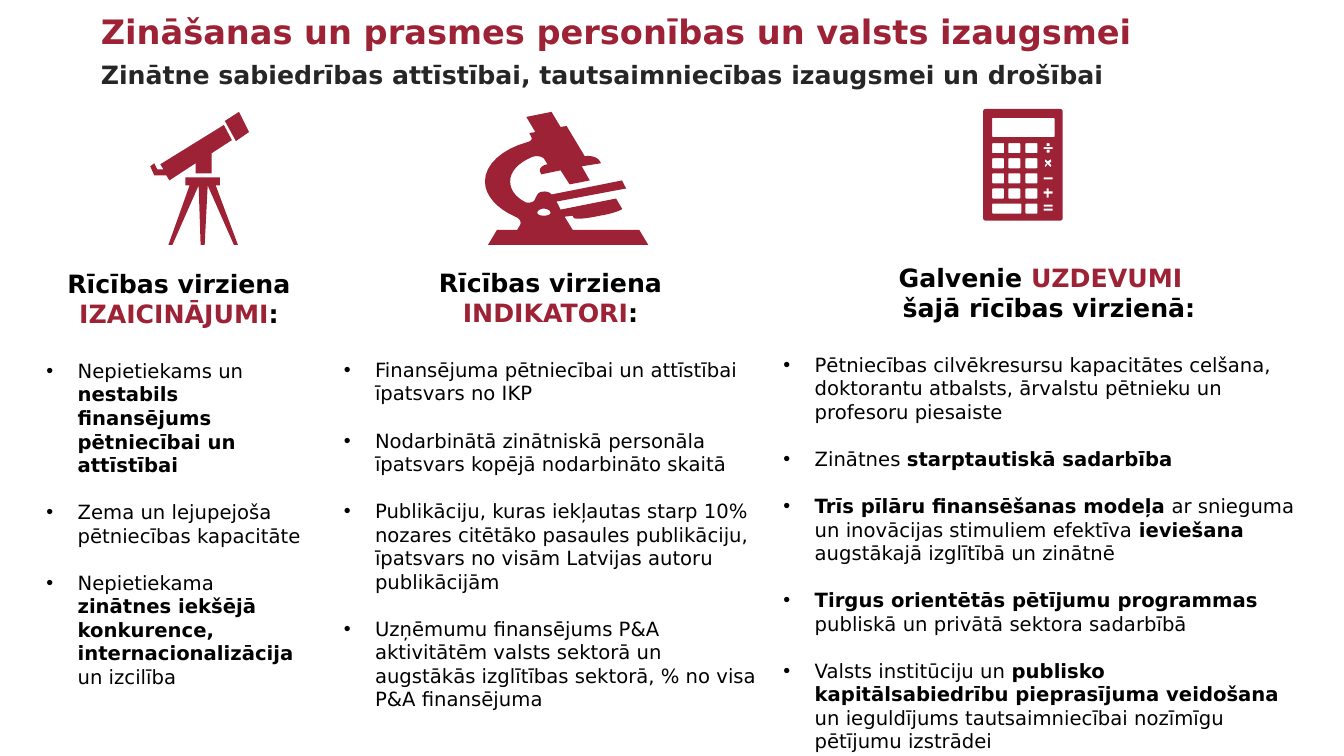
import pptx
import pptx.util
import pptx.dml.color
import pptx.enum.text
import lxml.etree

Inches = pptx.util.Inches
Pt = pptx.util.Pt
Align = pptx.enum.text.PP_ALIGN

CRIMSON = pptx.dml.color.RGBColor(0x9D, 0x22, 0x35)
CHARCOAL = pptx.dml.color.RGBColor(0x26, 0x26, 0x26)
BLACK = pptx.dml.color.RGBColor(0, 0, 0)
FONT = "DejaVu Sans"

TITLE = "Zināšanas un prasmes personības un valsts izaugsmei"
SUBTITLE = "Zinātne sabiedrības attīstībai, tautsaimniecības izaugsmei un drošībai"

# Text between asterisks is emphasised; each heading line carries its first-line shift.
COLUMNS = [
    {"box": (0.41, 2.61, 2.73, 4.89),
     "heading": [("Rīcības virziena", -0.25), ("*IZAICINĀJUMI*:", 0)],
     "points": [
         "Nepietiekams un *nestabils finansējums pētniecībai un attīstībai*",
         "Zema un lejupejoša pētniecības kapacitāte",
         "Nepietiekama *zinātnes iekšējā konkurence, internacionalizācija* un izcilība"]},
    {"box": (3.36, 2.6, 4.2, 4.9),
     "heading": [("Rīcības virziena", -0.35), ("*INDIKATORI*:", 0)],
     "points": [
         "Finansējuma pētniecībai un attīstībai īpatsvars no IKP",
         "Nodarbinātā zinātniskā personāla īpatsvars kopējā nodarbināto skaitā",
         "Publikāciju, kuras iekļautas starp 10% nozares citētāko pasaules publikāciju, "
         "īpatsvars no visām Latvijas autoru publikācijām",
         "Uzņēmumu finansējums P&A aktivitātēm valsts sektorā un augstākās izglītības "
         "sektorā, % no visa P&A finansējuma"]},
    {"box": (7.72, 2.55, 5.2, 4.95),
     "heading": [("Galvenie *UZDEVUMI*", 0), ("šajā rīcības virzienā:", 0.17)],
     "points": [
         "Pētniecības cilvēkresursu kapacitātes celšana, doktorantu atbalsts, "
         "ārvalstu pētnieku un profesoru piesaiste",
         "Zinātnes *starptautiskā sadarbība*",
         "*Trīs pīlāru finansēšanas modeļa* ar snieguma un inovācijas stimuliem efektīva "
         "*ieviešana* augstākajā izglītībā un zinātnē",
         "*Tirgus orientētās pētījumu programmas* publiskā un privātā sektora sadarbībā",
         "Valsts institūciju un *publisko kapitālsabiedrību pieprasījuma veidošana* "
         "un ieguldījums tautsaimniecībai nozīmīgu pētījumu izstrādei"]},
]

TELESCOPE = [
    [(2.37, 1.11), (2.23, 1.2), (2.34, 1.4), (2.47, 1.31)],
    [(2.22, 1.24), (1.59, 1.63), (1.62, 1.68), (1.56, 1.68), (1.53, 1.62), (1.49, 1.65),
     (1.53, 1.74), (1.65, 1.74), (1.68, 1.79), (1.94, 1.62), (1.94, 1.72), (2.1, 1.72),
     (2.1, 1.52), (2.3, 1.39)],
    [(1.84, 1.76), (1.84, 1.84), (1.88, 1.84), (1.67, 2.43), (1.71, 2.43), (1.97, 1.84),
     (1.99, 2.43), (2.03, 2.43), (2.06, 1.84), (2.32, 2.43), (2.36, 2.43), (2.14, 1.84),
     (2.18, 1.84), (2.18, 1.76)],
]

MICROSCOPE = [
    [(5.47, 1.11), (5.22, 1.16), (5.31, 1.31), (5.25, 1.32), (5.27, 1.36),
     (5.28, 1.38, 5.27, 1.4, 5.23, 1.41), (4.98, 1.48, 4.81, 1.63, 4.81, 1.8),
     (4.81, 1.94, 4.93, 2.07, 5.11, 2.15), (5.16, 2.17, 5.17, 2.2, 5.16, 2.23),
     (5.13, 2.28), (4.93, 2.28), (4.84, 2.43), (6.43, 2.43), (6.34, 2.28), (5.68, 2.28),
     (5.6, 2.15), (5.68, 2.14), (5.69, 2.16), (5.7, 2.18, 5.81, 2.17, 5.95, 2.14),
     (6.08, 2.12, 6.18, 2.08, 6.17, 2.07), (6.11, 1.97), (5.56, 2.08), (5.52, 2),
     (6.21, 1.87), (6.17, 1.79), (5.47, 1.93), (5.45, 1.89, 5.35, 1.89, 5.33, 1.93),
     (5.3, 1.99), (5.28, 2.01, 5.23, 2.02, 5.2, 2), (5.11, 1.95, 5.06, 1.88, 5.06, 1.8),
     (5.06, 1.7, 5.14, 1.62, 5.27, 1.56), (5.32, 1.54, 5.38, 1.55, 5.4, 1.58),
     (5.43, 1.63), (5.37, 1.64, 5.34, 1.68, 5.36, 1.71), (5.37, 1.73), (5.56, 1.69),
     (5.65, 1.83), (5.85, 1.79), (5.77, 1.65), (5.96, 1.62), (5.95, 1.6),
     (5.93, 1.56, 5.86, 1.54, 5.8, 1.55), (5.62, 1.25), (5.56, 1.26)],
    [(5.39, 2.07), (5.43, 2.07, 5.46, 2.09, 5.46, 2.11), (5.46, 2.13, 5.43, 2.14, 5.39, 2.14),
     (5.36, 2.14, 5.33, 2.13, 5.33, 2.11), (5.33, 2.09, 5.36, 2.07, 5.39, 2.07)],
]

MULTIPLY = [(10.37, 1.58), (10.39, 1.6), (10.42, 1.58), (10.43, 1.6), (10.41, 1.62),
            (10.43, 1.64), (10.42, 1.66), (10.39, 1.63), (10.37, 1.66), (10.36, 1.64),
            (10.38, 1.62), (10.36, 1.6)]
PLUS = [(10.38, 1.87), (10.4, 1.87), (10.4, 1.9), (10.44, 1.9), (10.44, 1.92), (10.4, 1.92),
        (10.4, 1.96), (10.38, 1.96), (10.38, 1.92), (10.35, 1.92), (10.35, 1.9), (10.38, 1.9)]
BAR_TOPS = [1.46, 1.76, 2.03, 2.07]
DIVIDE_DOT_TOPS = [1.42, 1.485]
KEY_LEFTS = [9.84, 10.0, 10.17]
KEY_TOP, KEY_PITCH, KEY_WIDTH, KEY_HEIGHT = 1.42, 0.15, 0.12, 0.1


def rounded(left, top, width, height, radius):
    right, bottom = left + width, top + height
    return [(left + radius, top), (right - radius, top),
            (right, top, right, top, right, top + radius), (right, bottom - radius),
            (right, bottom, right, bottom, right - radius, bottom), (left + radius, bottom),
            (left, bottom, left, bottom, left, bottom - radius), (left, top + radius),
            (left, top, left, top, left + radius, top)]


def calculator():
    contours = [rounded(9.75, 1.08, 0.79, 1.11, 0.06), rounded(9.84, 1.17, 0.62, 0.19, 0.02)]
    for row in range(4):
        for left in KEY_LEFTS:
            contours.append(rounded(left, KEY_TOP + row * KEY_PITCH, KEY_WIDTH, KEY_HEIGHT, 0.02))
    for left, width in ((KEY_LEFTS[0], 0.29), (KEY_LEFTS[2], KEY_WIDTH)):
        contours.append(rounded(left, KEY_TOP + 4 * KEY_PITCH, width, KEY_HEIGHT, 0.02))
    contours += [rounded(10.38, top, 0.03, 0.03, 0.01) for top in DIVIDE_DOT_TOPS]
    contours += [[(10.35, top), (10.44, top), (10.44, top + 0.02), (10.35, top + 0.02)]
                 for top in BAR_TOPS]
    return contours + [MULTIPLY, PLUS]


def flatten(contour, steps=8):
    points = []
    for node in contour:
        if len(node) == 2:
            points.append(node)
            continue
        start, first, second, end = points[-1], node[:2], node[2:4], node[4:]
        for step in range(1, steps + 1):
            t = step / steps
            points.append(tuple(
                (1 - t) ** 3 * a + 3 * (1 - t) ** 2 * t * b + 3 * (1 - t) * t ** 2 * c + t ** 3 * d
                for a, b, c, d in zip(start, first, second, end)))
    return [(Inches(x), Inches(y)) for x, y in points]


def draw_icon(slide, contours):
    outlines = [flatten(contour) for contour in contours]
    builder = slide.shapes.build_freeform(*outlines[0][0], scale=1.0)
    for index, outline in enumerate(outlines):
        if index:
            builder.move_to(*outline[0])
        builder.add_line_segments(outline[1:], close=True)
    icon = builder.convert_to_shape()
    icon.shadow.inherit = False
    icon.fill.solid()
    icon.fill.fore_color.rgb = CRIMSON
    icon.line.fill.background()


def apply(target, values):
    for name, value in values.items():
        setattr(target, name, value)


def place(holder, box):
    apply(holder, dict(zip(("left", "top", "width", "height"), map(Inches, box))))
    frame = holder.text_frame
    apply(frame, {"word_wrap": True, "auto_size": pptx.enum.text.MSO_AUTO_SIZE.NONE,
                  "vertical_anchor": pptx.enum.text.MSO_ANCHOR.TOP})
    apply(frame, {f"margin_{side}": Inches(0.05) for side in ("left", "top", "right", "bottom")})
    return frame


def write(paragraph, text, size, plain, strong, align=Align.LEFT, before=0, margin=0, indent=0,
          bullet=None):
    apply(paragraph, {"alignment": align, "space_before": Pt(before), "space_after": Pt(0)})
    props = paragraph._p.get_or_add_pPr()
    props.set("marL", str(Inches(margin)))
    props.set("indent", str(Inches(indent)))
    mark = lxml.etree.SubElement(
        props, pptx.oxml.ns.qn("a:buChar" if bullet else "a:buNone"))
    if bullet:
        mark.set("char", bullet)
    for index, part in enumerate(text.split("*")):
        if part:
            run = paragraph.add_run()
            run.text = part
            color, bold = strong if index % 2 else plain
            apply(run.font, {"name": FONT, "size": Pt(size), "bold": bold})
            run.font.color.rgb = color


def fill_column(holder, column):
    frame = place(holder, column["box"])
    paragraph = frame.paragraphs[0]
    for index, (line, shift) in enumerate(column["heading"]):
        if index:
            paragraph = frame.add_paragraph()
        write(paragraph, line, 18, (BLACK, True), (CRIMSON, True), Align.CENTER, indent=shift)
    for index, point in enumerate(column["points"]):
        write(frame.add_paragraph(), point, 14, (BLACK, False), (BLACK, True),
              before=16.8 if index else 21.6, margin=0.31, indent=-0.31, bullet="•")


def main():
    deck = pptx.Presentation()
    apply(deck, {"slide_width": Inches(13.33), "slide_height": Inches(7.5)})
    slide = deck.slides.add_slide(deck.slide_layouts.get_by_name("Comparison"))
    title, subtitle, *columns = slide.placeholders
    for holder, text, box, size, color in (
            (title, TITLE, (0.95, 0.06, 10.6, 0.5), 24, CRIMSON),
            (subtitle, SUBTITLE, (0.95, 0.54, 10.4, 0.4), 18, CHARCOAL)):
        write(place(holder, box).paragraphs[0], text, size, (color, True), (color, True))
    for holder, column in zip(columns, COLUMNS):
        fill_column(holder, column)
    for contours in (TELESCOPE, MICROSCOPE, calculator()):
        draw_icon(slide, contours)
    deck.save("out.pptx")


if __name__ == "__main__":
    main()
